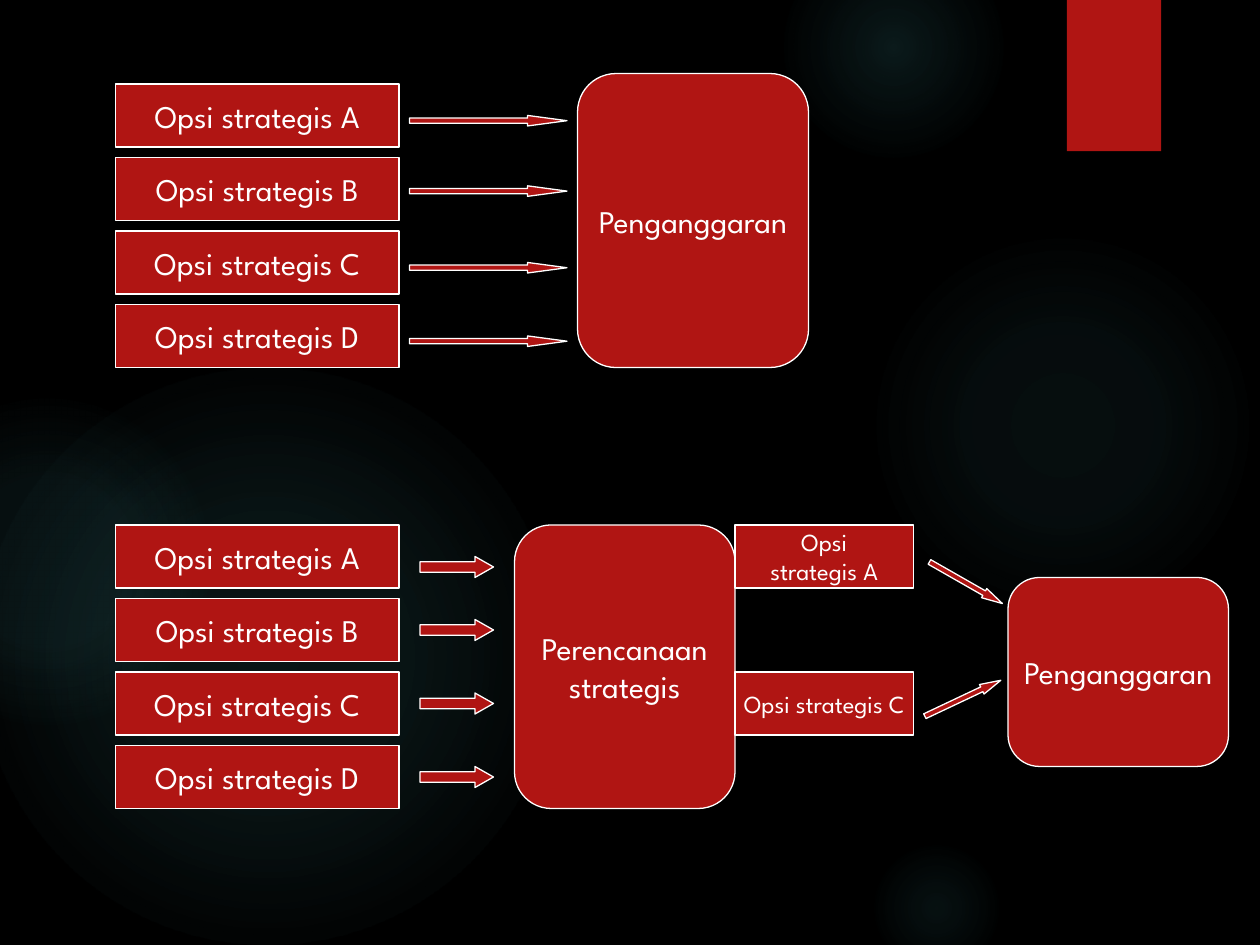
import pptx
import pptx.dml.color
import pptx.enum.shapes
import pptx.enum.text
import pptx.oxml
import pptx.oxml.ns
import pptx.util

RGBColor = pptx.dml.color.RGBColor
MSO_SHAPE = pptx.enum.shapes.MSO_SHAPE

BLACK = RGBColor(0x00, 0x00, 0x00)
WHITE = RGBColor(0xFF, 0xFF, 0xFF)
RED = RGBColor(0xB0, 0x15, 0x13)
TEAL = RGBColor(0x50, 0xB9, 0xC1)
FONT = "League Spartan"
EMU_PER_PX = 7620


def px(n):
    return pptx.util.Emu(n * EMU_PER_PX)


class Deck:
    def __init__(self, width, height):
        self.prs = pptx.Presentation()
        self.prs.slide_width = px(width)
        self.prs.slide_height = px(height)
        self.s = self.prs.slides.add_slide(self.prs.slide_layouts[6])
        fill = self.s.background.fill
        fill.solid()
        fill.fore_color.rgb = BLACK

    def shape(self, kind, x, y, w, h, outlined=True):
        sp = self.s.shapes.add_shape(kind, px(x), px(y), px(w), px(h))
        sp.shadow.inherit = False
        sp.fill.solid()
        sp.fill.fore_color.rgb = RED
        if outlined:
            sp.line.color.rgb = WHITE
            sp.line.width = pptx.util.Pt(0.75)
        else:
            sp.line.fill.background()
        return sp

    def glow(self, x, y, size, stops):
        sp = self.shape(MSO_SHAPE.OVAL, x, y, size, size, outlined=False)
        gs = "".join(
            f'<a:gs pos="{pos * 1000}"><a:srgbClr val="{TEAL}">'
            f'<a:alpha val="{alpha * 1000}"/></a:srgbClr></a:gs>'
            for pos, alpha in stops)
        grad = pptx.oxml.parse_xml(
            f'<a:gradFill {pptx.oxml.ns.nsdecls("a")} rotWithShape="1">'
            f'<a:gsLst>{gs}</a:gsLst><a:path path="circle">'
            '<a:fillToRect l="50000" t="50000" r="50000" b="50000"/>'
            '</a:path></a:gradFill>')
        solid = sp.fill._xPr.find(pptx.oxml.ns.qn("a:solidFill"))
        solid.getparent().replace(solid, grad)

    def box(self, text, x, y, w, h, size=18, kind=MSO_SHAPE.RECTANGLE):
        sp = self.shape(kind, x, y, w, h)
        tf = sp.text_frame
        tf.text = text
        tf.word_wrap = False
        tf.vertical_anchor = pptx.enum.text.MSO_ANCHOR.MIDDLE
        for p in tf.paragraphs:
            p.alignment = pptx.enum.text.PP_ALIGN.CENTER
            for r in p.runs:
                r.font.name = FONT
                r.font.size = pptx.util.Pt(size)
                r.font.color.rgb = WHITE

    def stage(self, text, x, y, w, h):
        self.box(text, x, y, w, h, kind=MSO_SHAPE.ROUNDED_RECTANGLE)

    def arrow(self, x, y, w, h, head, rotation=0):
        sp = self.shape(MSO_SHAPE.RIGHT_ARROW, x, y, w, h)
        sp.adjustments[0] = 0.5
        sp.adjustments[1] = head
        sp.rotation = rotation

    def options(self, top):
        for i, letter in enumerate("ABCD"):
            self.box(f"Opsi strategis {letter}", 110, top + 70 * i, 270, 60)


def main():
    deck = Deck(1200, 900)

    deck.glow(827, 220, 370, [(0, 7), (36, 6), (69, 0)])
    deck.glow(746, -60, 210, [(0, 14), (36, 7), (73, 0)])
    deck.glow(827, 800, 130, [(0, 9), (36, 5), (66, 0)])
    deck.glow(-20, 350, 550, [(0, 11), (36, 10), (75, 0)])
    deck.glow(-110, 380, 310, [(0, 8), (36, 8), (72, 0)])
    deck.shape(MSO_SHAPE.RECTANGLE, 1016, 0, 90, 144, outlined=False)

    deck.options(80)
    deck.stage("Penganggaran", 550, 70, 220, 280)
    for y in (110, 177, 250, 320):
        deck.arrow(390, y, 150, 10, 3.75)

    deck.options(500)
    deck.stage("Perencanaan\nstrategis", 490, 500, 210, 270)
    for y in (530, 590, 660, 730):
        deck.arrow(400, y, 70, 20, 0.88)

    deck.box("Opsi\nstrategis A", 700, 500, 170, 60, size=14)
    deck.box("Opsi strategis C", 700, 640, 170, 60, size=14)
    deck.stage("Penganggaran", 960, 550, 210, 180)
    deck.arrow(880, 550, 80, 10, 2, rotation=29.7)
    deck.arrow(877, 660, 80, 10, 2, rotation=334.7)

    deck.prs.save("out.pptx")


if __name__ == "__main__":
    main()
